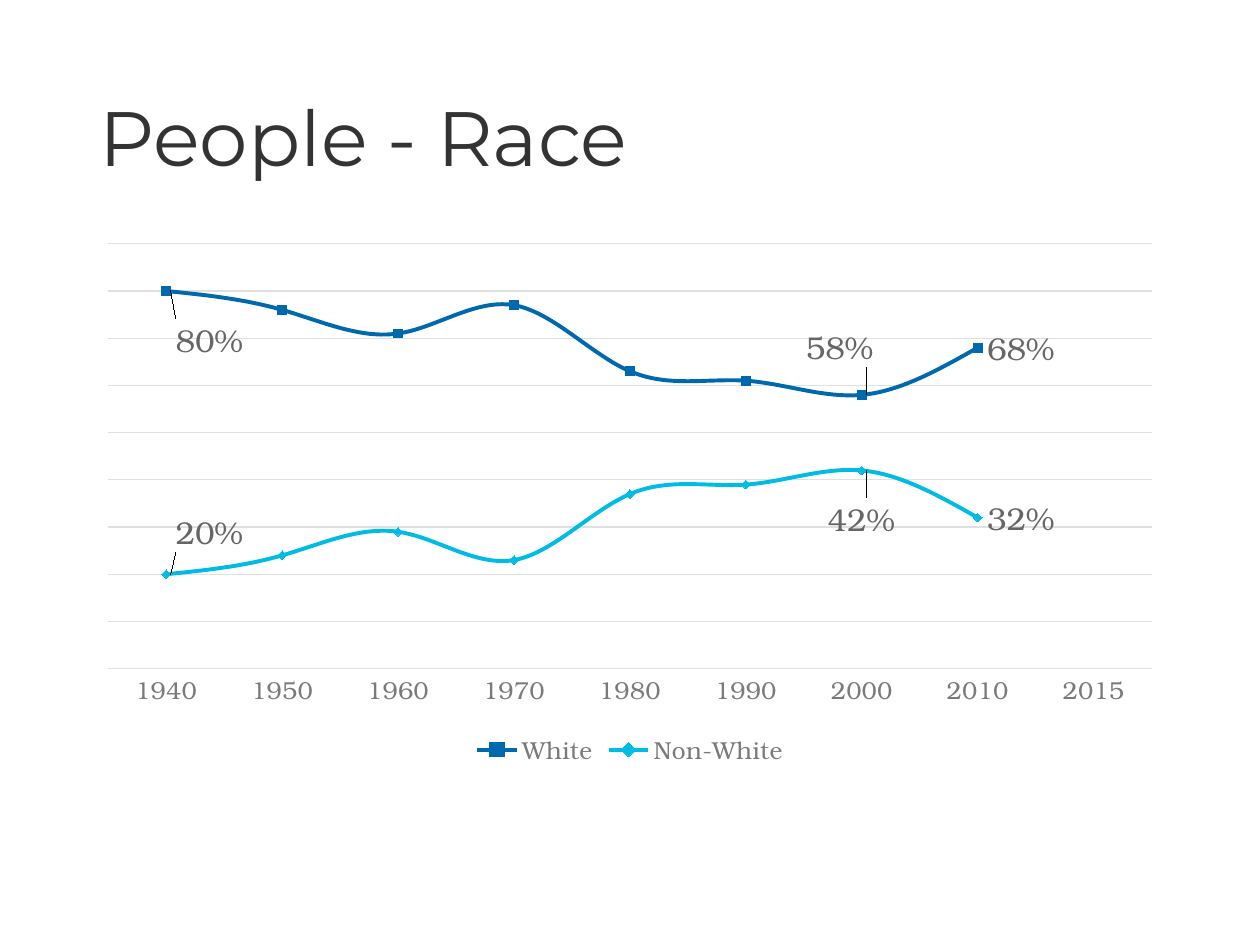
from lxml import etree
from pptx import Presentation
from pptx.chart.data import CategoryChartData
from pptx.dml.color import RGBColor
from pptx.enum.chart import XL_CHART_TYPE as ChartType
from pptx.enum.chart import XL_LABEL_POSITION as LabelPos
from pptx.enum.chart import XL_LEGEND_POSITION as LegendPos
from pptx.enum.chart import XL_TICK_LABEL_POSITION as TickLabelPos
from pptx.enum.chart import XL_TICK_MARK as TickMark
from pptx.enum.text import MSO_ANCHOR as Anchor
from pptx.enum.text import PP_ALIGN as Align
from pptx.oxml import parse_xml
from pptx.util import Pt

COLORS = {
    "title": "333333",
    "axis": "7A7A7A",
    "label": "666666",
    "grid": "E0E0E0",
    "White": "0068AC",
    "Non-White": "00BCE4",
}
HEADING, BODY = "Montserrat", "TeX Gyre Bonum"
CHART_NS = "http://schemas.openxmlformats.org/drawingml/2006/chart"
C15_NS = "http://schemas.microsoft.com/office/drawing/2012/chart"


def set_font(font, size, color, name=BODY):
    font.size = Pt(size)
    font.name = name
    font.bold = False
    font.color.rgb = RGBColor.from_string(COLORS[color])


def write(frame, text, size, color, name, align, spacing):
    frame.word_wrap = True
    frame.vertical_anchor = Anchor.MIDDLE
    paragraph = frame.paragraphs[0]
    paragraph.alignment = align
    paragraph.line_spacing = spacing
    run = paragraph.add_run()
    run.text = text
    set_font(run.font, size, color, name)


deck = Presentation()
deck.slide_width, deck.slide_height = Pt(720), Pt(540)
slide = deck.slides.add_slide(deck.slide_layouts[5])

title = slide.shapes.title
title.left, title.top, title.width, title.height = Pt(49.5), Pt(28.75), Pt(621), Pt(104.4)
write(title.text_frame, "People - Race", size=44, color="title", name=HEADING,
      align=Align.LEFT, spacing=0.9)

white_share = [0.80, 0.76, 0.71, 0.77, 0.63, 0.61, 0.58, 0.68]
shares = CategoryChartData(number_format="0%")
shares.categories = ["1940", "1950", "1960", "1970", "1980", "1990", "2000", "2010", "2015"]
shares.add_series("White", white_share + [None])
shares.add_series("Non-White", [round(1 - share, 2) for share in white_share] + [None])
race_chart = slide.shapes.add_chart(
    ChartType.LINE, Pt(49.5), Pt(133.2), Pt(621), Pt(307.4), shares).chart
race_chart.has_title = False
set_font(race_chart.font, 10, "title")

years = race_chart.category_axis
years.major_tick_mark = years.minor_tick_mark = TickMark.NONE
years.format.line.color.rgb = RGBColor.from_string(COLORS["grid"])
years.format.line.width = Pt(0.75)
set_font(years.tick_labels.font, 14, "axis")

percent = race_chart.value_axis
percent.minimum_scale, percent.maximum_scale, percent.major_unit = 0, 0.9, 0.1
percent.tick_label_position = TickLabelPos.NONE
percent.visible = False
percent.has_major_gridlines = True
percent.major_gridlines.format.line.color.rgb = RGBColor.from_string(COLORS["grid"])
percent.major_gridlines.format.line.width = Pt(0.75)

race_chart.has_legend = True
race_chart.legend.position = LegendPos.BOTTOM
race_chart.legend.include_in_layout = False
set_font(race_chart.legend.font, 14, "axis")

plot_area = race_chart.plots[0]._element.getparent()
for old_layout in plot_area.findall(f"{{{CHART_NS}}}layout"):
    plot_area.remove(old_layout)
plot_area.insert(0, parse_xml(
    f'<c:layout xmlns:c="{CHART_NS}"><c:manualLayout><c:layoutTarget val="inner"/>'
    '<c:xMode val="edge"/><c:yMode val="edge"/><c:x val="0.02"/><c:y val="0.02"/>'
    '<c:w val="0.96"/><c:h val="0.79"/></c:manualLayout></c:layout>'))

label_shifts = {
    "White": {0: (0, 0.09), 6: (-0.06, -0.09), 7: None},
    "Non-White": {0: (0, -0.08), 6: (-0.04, 0.09), 7: None},
}
for series in race_chart.plots[0].series:
    series.smooth = True
    series.marker.style = None
    series.format.line.color.rgb = RGBColor.from_string(COLORS[series.name])
    series.format.line.width = Pt(2.25)
    series.data_labels.show_value = False
    for index, shift in label_shifts[series.name].items():
        label = series.points[index].data_label
        set_font(label.font, 18, "label")
        label.position = LabelPos.RIGHT
        if shift:
            label_xml = series.data_labels._element.xpath(f'c:dLbl[c:idx/@val="{index}"]')[0]
            label_xml.insert(1, parse_xml(
                f'<c:layout xmlns:c="{CHART_NS}"><c:manualLayout><c:x val="{shift[0]}"/>'
                f'<c:y val="{shift[1]}"/></c:manualLayout></c:layout>'))
    extensions = etree.SubElement(series.data_labels._element, f"{{{CHART_NS}}}extLst")
    extensions.append(parse_xml(
        f'<c:ext xmlns:c="{CHART_NS}" xmlns:c15="{C15_NS}" '
        'uri="{CE6537A1-D6FC-4f65-9D91-7224C49458BB}">'
        '<c15:showLeaderLines val="1"/></c:ext>'))

deck.save("out.pptx")
